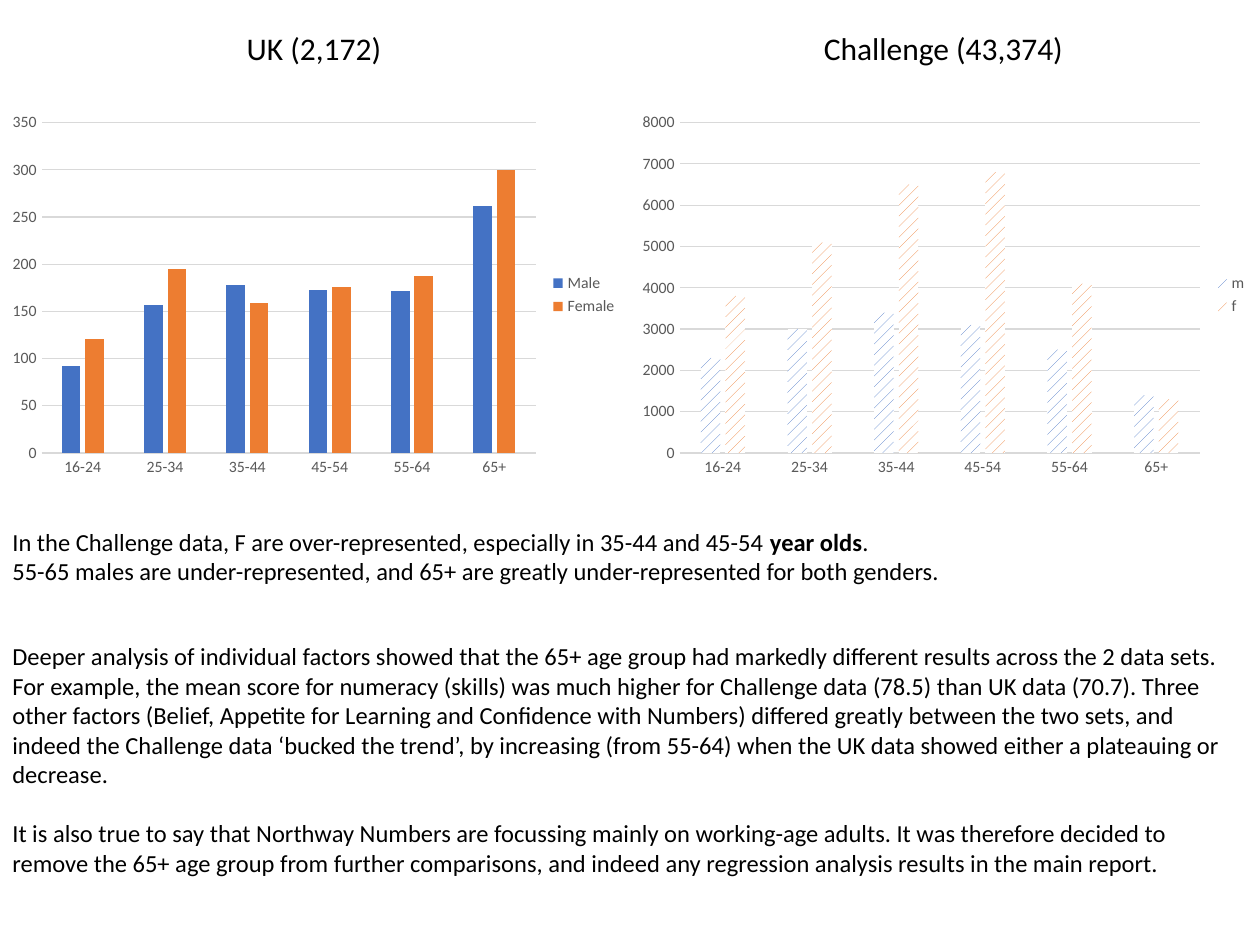
from pptx import Presentation
from pptx.chart.data import CategoryChartData
from pptx.dml.color import RGBColor
from pptx.enum.chart import XL_CHART_TYPE as ChartType, XL_LEGEND_POSITION as LegendPos, XL_TICK_MARK as Tick
from pptx.enum.dml import MSO_PATTERN as Pattern
from pptx.enum.text import MSO_AUTO_SIZE as AutoSize
from pptx.util import Inches, Pt

FONT = "Calibri"
COLORS = {"male": "4472C4", "female": "ED7D31", "text": "000000",
          "label": "595959", "grid": "D9D9D9", "back": "FFFFFF"}
AGES = ["16-24", "25-34", "35-44", "45-54", "55-64", "65+"]


def style_font(font, size, color):
    font.name = FONT
    font.size = Pt(size)
    font.color.rgb = RGBColor.from_string(COLORS[color])


def add_text(left, top, width, height, size, paragraphs, wrap=True, gap=0):
    """Each paragraph is a list of (text, bold) runs."""
    box = page.shapes.add_textbox(Inches(left), Inches(top), Inches(width), Inches(height))
    frame = box.text_frame
    frame.word_wrap = wrap
    frame.auto_size = AutoSize.SHAPE_TO_FIT_TEXT
    for index, spans in enumerate(paragraphs):
        para = frame.add_paragraph() if index else frame.paragraphs[0]
        if index and gap:
            para.space_before = Pt(gap)
        for text, bold in spans:
            span = para.add_run()
            span.text = text
            style_font(span.font, size, "text")
            span.font.bold = bold


deck = Presentation()
deck.slide_width, deck.slide_height = Inches(10), Inches(7.5)
page = deck.slides.add_slide(deck.slide_layouts[6])

# Age and gender charts, side by side
charts = [
    (0, False, {"Male": [92, 157, 178, 173, 172, 262],
                "Female": [121, 195, 159, 176, 187, 300]}),
    (5, True, {"m": [2300, 3000, 3400, 3100, 2500, 1400],
               "f": [3800, 5100, 6500, 6800, 4100, 1300]}),
]
for left, patterned, counts in charts:
    data = CategoryChartData()
    data.categories = AGES
    for name, values in counts.items():
        data.add_series(name, values)
    chart = page.shapes.add_chart(ChartType.COLUMN_CLUSTERED, Inches(left), Inches(0.84),
                                  Inches(5), Inches(3), data).chart
    chart.has_title = False
    style_font(chart.font, 10, "text")

    # Bars
    plot = chart.plots[0]
    plot.gap_width = 219
    plot.overlap = -27
    plot.vary_by_categories = False
    for series, gender in zip(plot.series, ("male", "female")):
        fill = series.format.fill
        color = RGBColor.from_string(COLORS[gender])
        if patterned:
            fill.patterned()
            fill.pattern = Pattern.PERCENT_20
            fill.fore_color.rgb = color
            fill.back_color.rgb = RGBColor.from_string(COLORS["back"])
        else:
            fill.solid()
            fill.fore_color.rgb = color

    # Axes, gridlines and legend
    for axis in (chart.category_axis, chart.value_axis):
        axis.major_tick_mark = axis.minor_tick_mark = Tick.NONE
        style_font(axis.tick_labels.font, 9, "label")
    chart.value_axis.format.line.fill.background()
    chart.value_axis.has_major_gridlines = True
    for lined in (chart.category_axis, chart.value_axis.major_gridlines):
        lined.format.line.width = Pt(0.75)
        lined.format.line.color.rgb = RGBColor.from_string(COLORS["grid"])
    chart.has_legend = True
    chart.legend.position = LegendPos.RIGHT
    chart.legend.include_in_layout = False
    style_font(chart.legend.font, 9, "label")

# Chart headings
add_text(1.86, 0.18, 1.28, 0.4, 18, [[("UK (2,172)", False)]], wrap=False)
add_text(6.44, 0.18, 2.12, 0.4, 18, [[("Challenge (43,374)", False)]], wrap=False)

# Findings
add_text(0, 4.13, 10, 0.57, 14, [
    [("In the Challenge data, F are over-represented, especially in 35-44 and 45-54 ", False),
     ("year olds", True), (".", False)],
    [("55-65 males are under-represented, and 65+ are greatly under-represented "
      "for both genders.", False)],
])

# Deeper analysis
add_text(0, 5.04, 10, 1.99, 14, [
    [("Deeper analysis of individual factors showed that the 65+ age group had markedly "
      "different results across the 2 data sets. For example, the mean score for numeracy "
      "(skills) was much higher for Challenge data (78.5) than UK data (70.7). Three other "
      "factors (Belief, Appetite for Learning and Confidence with Numbers) differed greatly "
      "between the two sets, and indeed the Challenge data ‘bucked the trend’, by increasing "
      "(from 55-64) when the UK data showed either a plateauing or decrease.", False)],
    [("It is also true to say that Northway Numbers are focussing mainly on working-age "
      "adults. It was therefore decided to remove the 65+ age group from further comparisons, "
      "and indeed any regression analysis results in the main report.", False)],
], gap=17)

deck.save("out.pptx")
